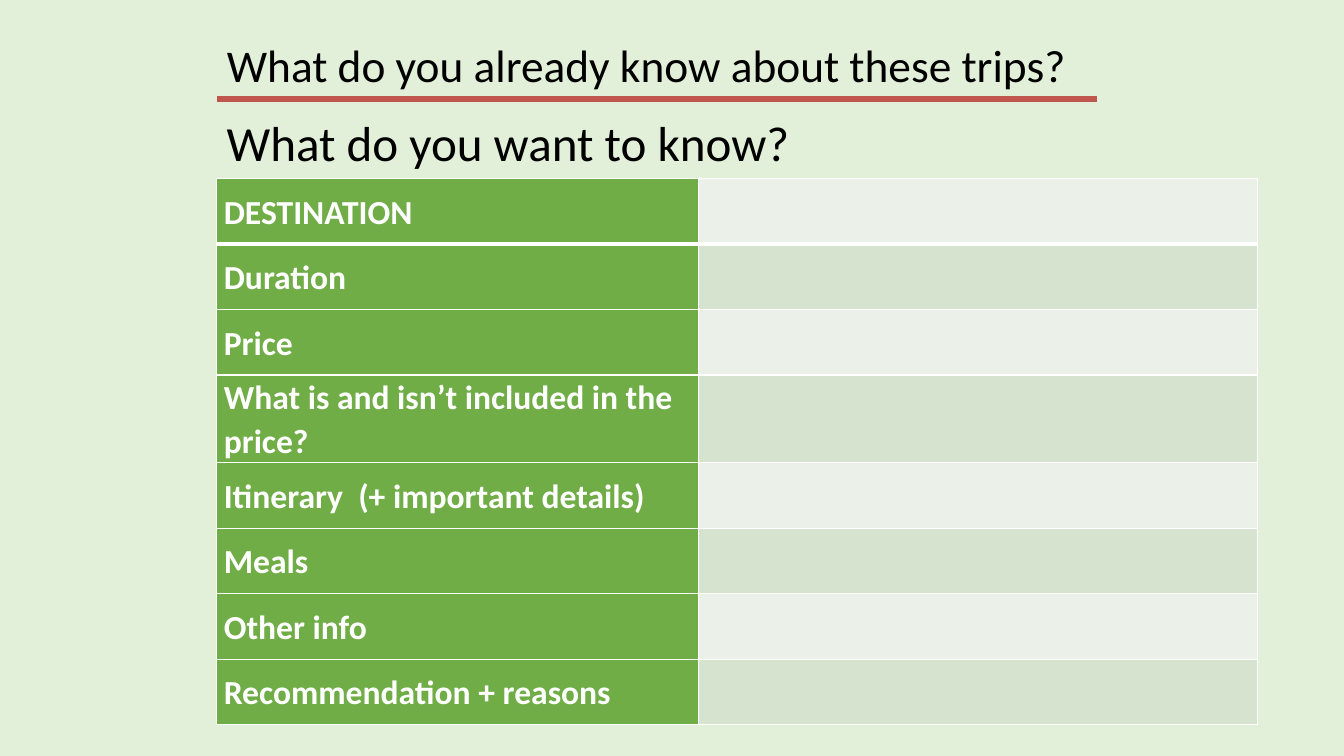
import pptx
import pptx.util
import pptx.dml.color
import pptx.enum.shapes
import pptx.enum.text
import pptx.oxml
import pptx.oxml.ns
import lxml.etree

Inches = pptx.util.Inches
Pt = pptx.util.Pt
RGBColor = pptx.dml.color.RGBColor
MIDDLE = pptx.enum.text.MSO_ANCHOR.MIDDLE

MINT = RGBColor(0xE2, 0xF0, 0xD9)
GREEN = RGBColor(0x70, 0xAD, 0x47)
PALE = RGBColor(0xEB, 0xF1, 0xE9)
SAGE = RGBColor(0xD5, 0xE3, 0xCF)
RED = RGBColor(0xBF, 0x57, 0x4F)
BLACK = RGBColor(0, 0, 0)
WHITE = RGBColor(0xFF, 0xFF, 0xFF)

LEFT = 2.15
TOPICS = [
    "DESTINATION",
    "Duration",
    "Price",
    "What is and isn’t included in the price?",
    "Itinerary  (+ important details)",
    "Meals",
    "Other info",
    "Recommendation + reasons",
]
WIDTHS = [4.78, 5.54]
HEIGHTS = [0.8 if "included" in topic else 0.65 for topic in TOPICS]


def write(frame, text, size=24, color=BLACK, bold=False, spacing=1.0, after=0):
    frame.word_wrap = True
    line = frame.paragraphs[0]
    line.alignment = pptx.enum.text.PP_ALIGN.LEFT
    line.line_spacing = spacing
    line.space_before = Pt(0)
    line.space_after = Pt(after)
    run = line.add_run()
    run.text = text
    run.font.name = "Calibri"
    run.font.size = Pt(size)
    run.font.bold = bold
    run.font.color.rgb = color


class Deck:
    """Holds the style and the current slide, and adds each kind of element."""

    def __init__(self):
        self.show = pptx.Presentation()
        self.show.slide_width = Inches(13.33)
        self.show.slide_height = Inches(7.5)
        self.slide = self.show.slides.add_slide(self.show.slide_layouts[5])
        fill = self.slide.background.fill
        fill.solid()
        fill.fore_color.rgb = MINT

    def title(self, text, left, top, width, height, **style):
        title = self.slide.shapes.title
        title.left, title.top = Inches(left), Inches(top)
        title.width, title.height = Inches(width), Inches(height)
        title.text_frame.auto_size = pptx.enum.text.MSO_AUTO_SIZE.NONE
        title.text_frame.vertical_anchor = MIDDLE
        write(title.text_frame, text, **style)

    def text(self, text, left, top, width, height, **style):
        box = self.slide.shapes.add_textbox(
            Inches(left), Inches(top), Inches(width), Inches(height))
        box.text_frame.vertical_anchor = MIDDLE
        write(box.text_frame, text, **style)

    def rule(self, left, top, right, color, weight):
        rule = self.slide.shapes.add_connector(
            pptx.enum.shapes.MSO_CONNECTOR.STRAIGHT,
            Inches(left), Inches(top), Inches(right), Inches(top))
        rule.line.color.rgb = color
        rule.line.width = Pt(weight)
        lxml.etree.SubElement(
            rule._element.spPr, pptx.oxml.ns.qn("a:effectLst"))

    def edge(self, cell, side, weight):
        space = pptx.oxml.ns.nsdecls("a")
        cell._tc.get_or_add_tcPr().append(pptx.oxml.parse_xml(
            f'<a:ln{side} {space} w="{Pt(weight)}"><a:solidFill>'
            f'<a:srgbClr val="{WHITE}"/></a:solidFill></a:ln{side}>'))

    def cell(self, cell, color, row):
        heavy = {(0, "B"), (1, "T")}
        for side in "LRTB":
            self.edge(cell, side, 3 if (row, side) in heavy else 1)
        cell.fill.solid()
        cell.fill.fore_color.rgb = color

    def table(self, topics, left, top, widths, heights):
        table = self.slide.shapes.add_table(
            len(topics), len(widths), Inches(left), Inches(top),
            Inches(sum(widths)), Inches(sum(heights))).table
        table.first_row = table.horz_banding = False
        for column, width in zip(table.columns, widths):
            column.width = Inches(width)
        for row, (topic, height) in enumerate(zip(topics, heights)):
            table.rows[row].height = Inches(height)
            label, answer = table.rows[row].cells
            self.cell(label, GREEN, row)
            self.cell(answer, SAGE if row % 2 else PALE, row)
            label.vertical_anchor = MIDDLE
            label.margin_left = label.margin_right = Inches(0.07)
            label.margin_top = label.margin_bottom = 0
            write(label.text_frame, topic, color=WHITE, bold=True,
                  spacing=1.07, after=8)

    def save(self):
        self.show.save("out.pptx")


def main():
    deck = Deck()
    deck.title("What do you already know about these trips?",
               LEFT, 0.37, 9.25, 0.61, size=32.4, spacing=0.9)
    deck.rule(LEFT, 0.98, 10.88, RED, 4.5)
    deck.table(TOPICS, LEFT, 1.77, WIDTHS, HEIGHTS)
    deck.text("What do you want to know?",
              LEFT, 1.16, 9.25, 0.61, size=35.1, spacing=0.8)
    deck.save()


if __name__ == "__main__":
    main()
